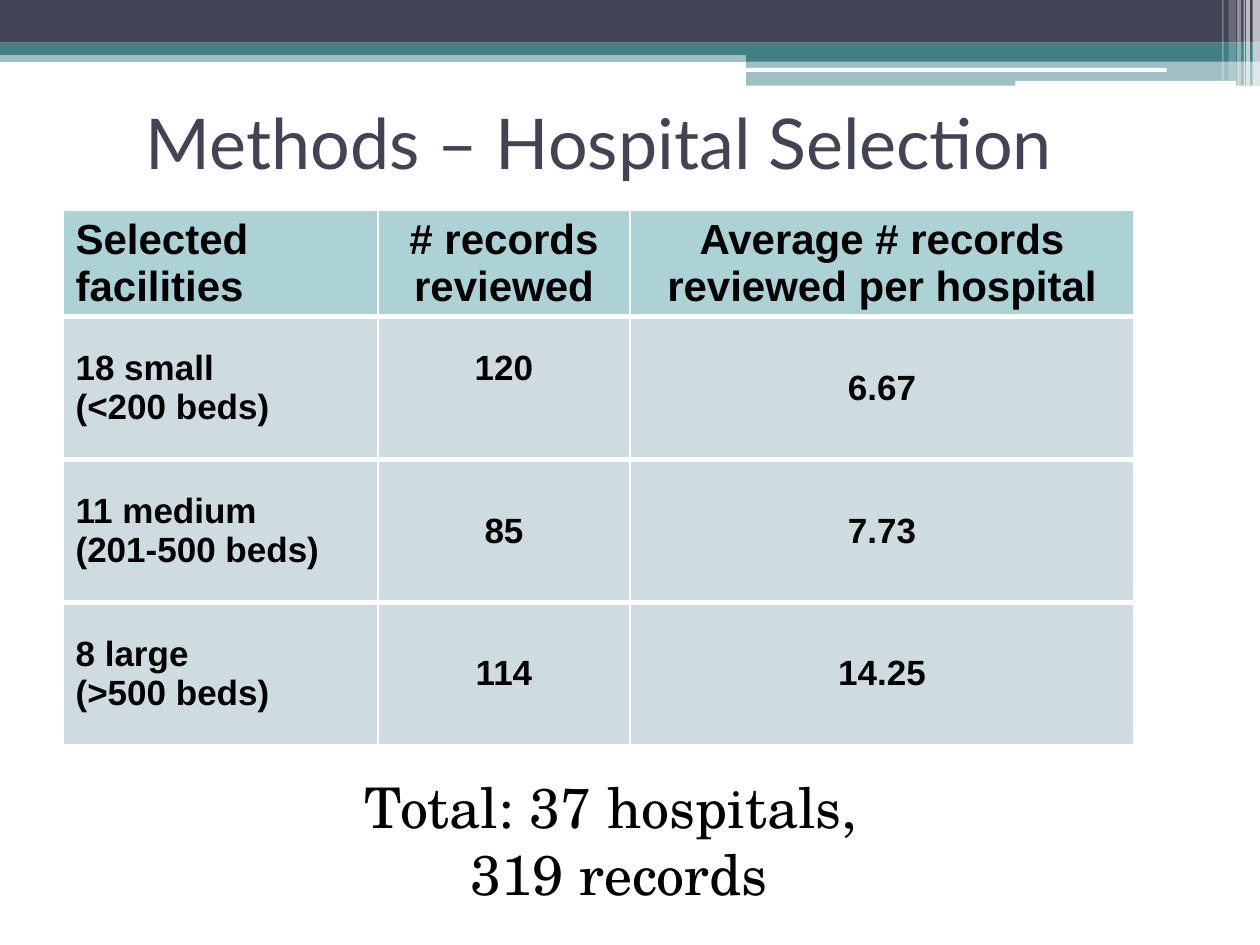
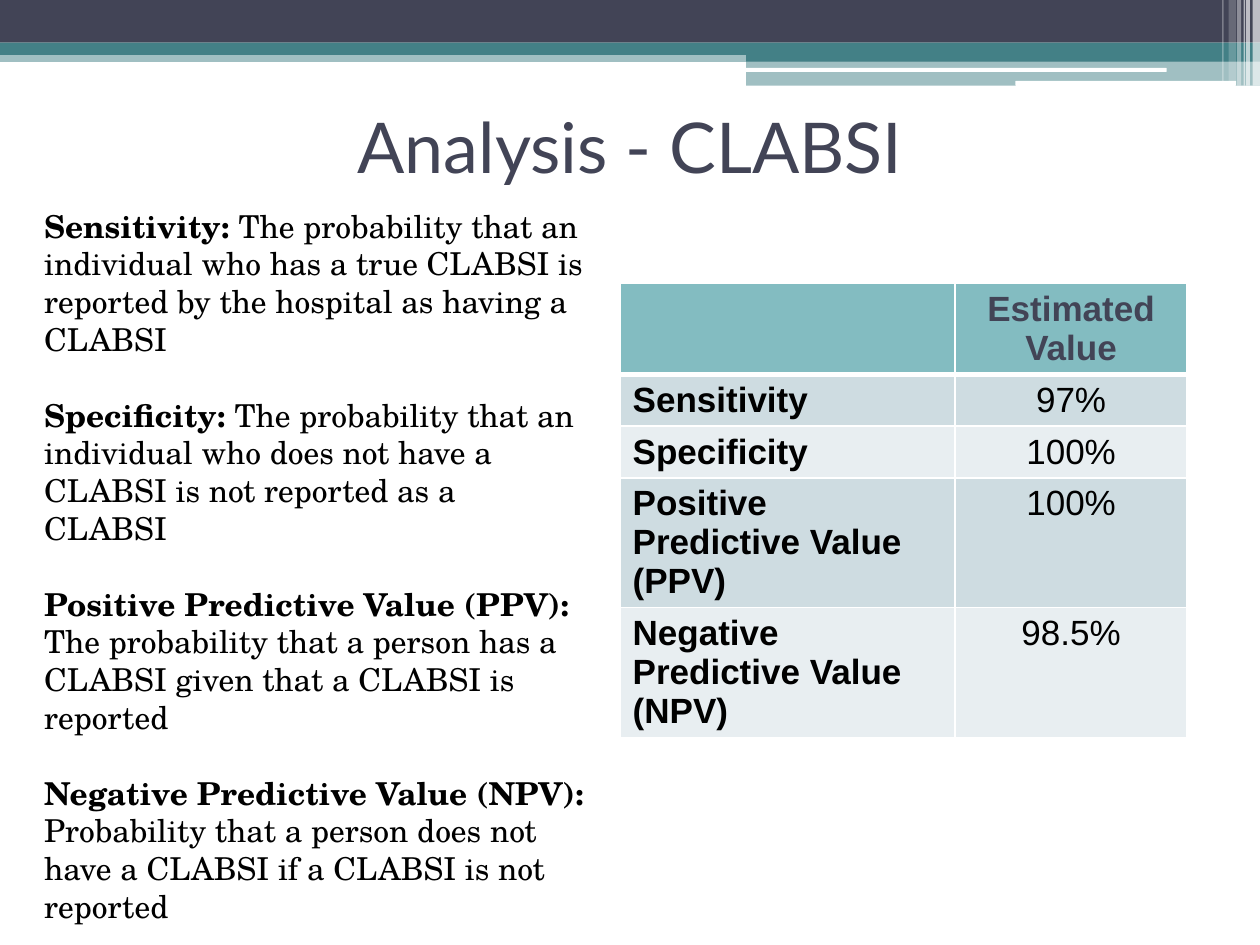
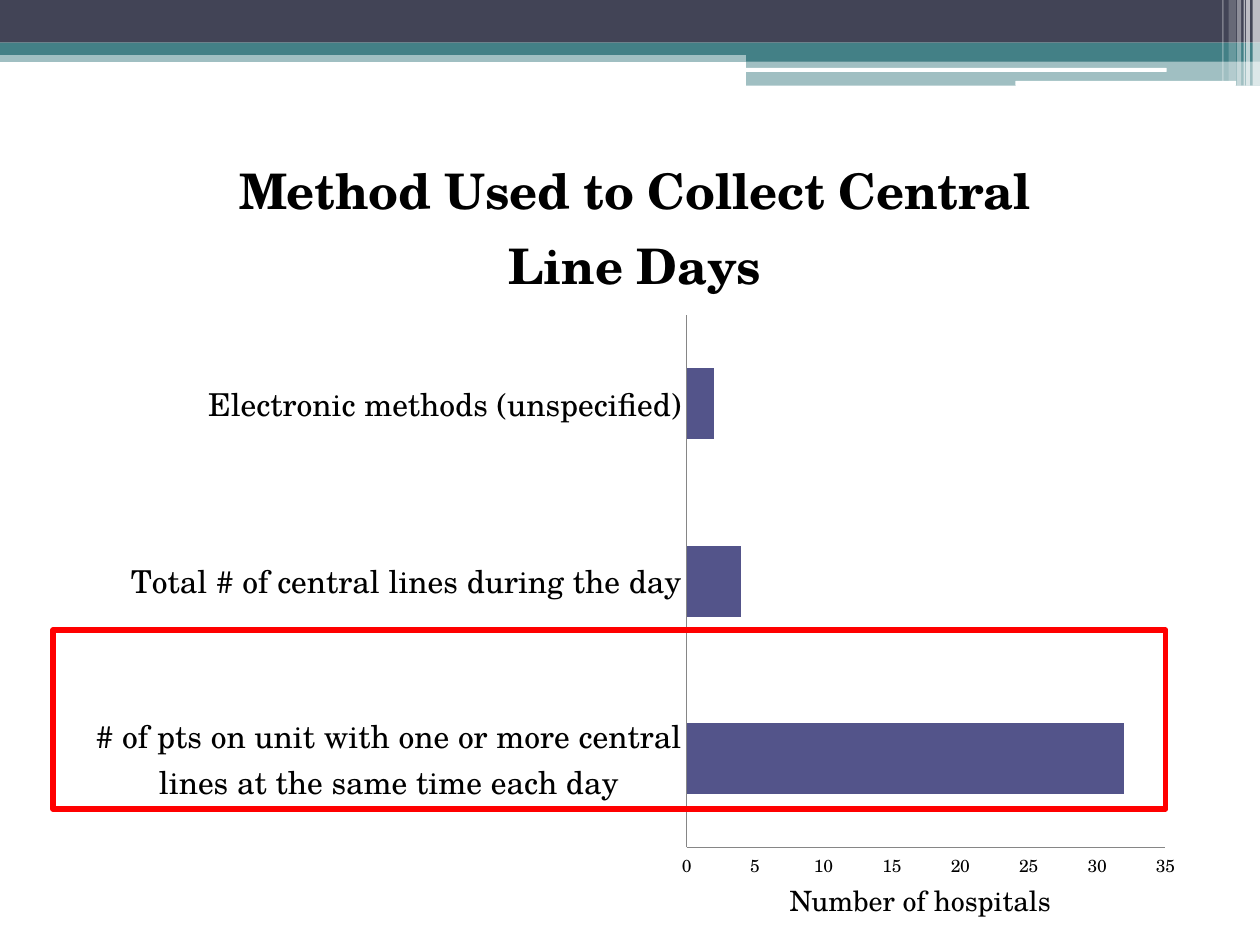
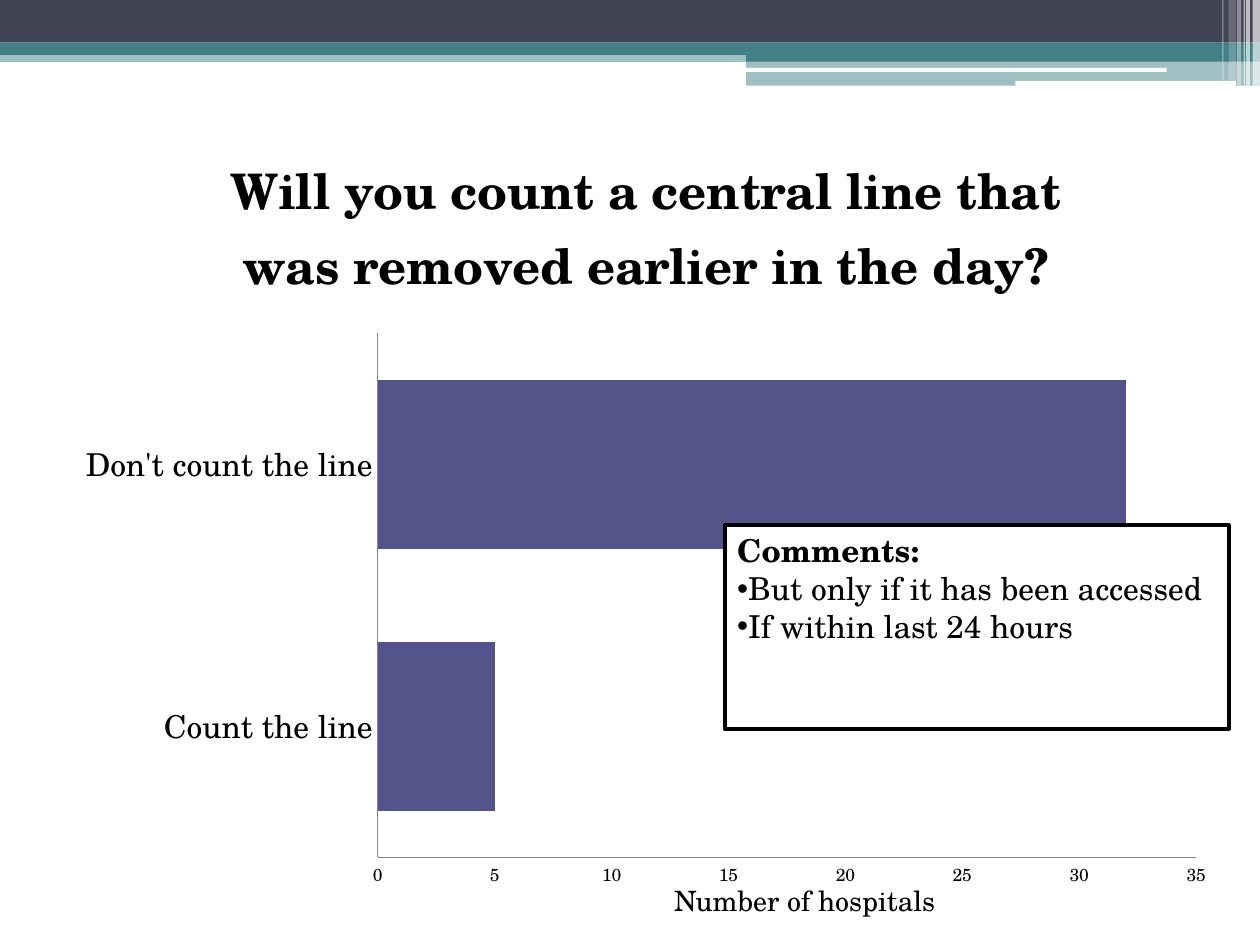
import collections

import lxml.etree
import pptx
import pptx.chart.data
import pptx.dml.color
import pptx.enum.chart
import pptx.enum.shapes
import pptx.enum.text
import pptx.oxml.ns
import pptx.util

Cm = pptx.util.Cm
Pt = pptx.util.Pt
RGBColor = pptx.dml.color.RGBColor
qn = pptx.oxml.ns.qn
Align = pptx.enum.text.PP_ALIGN
Anchor = pptx.enum.text.MSO_ANCHOR
AutoSize = pptx.enum.text.MSO_AUTO_SIZE
Preset = pptx.enum.shapes.MSO_SHAPE

DARK = RGBColor(0x42, 0x44, 0x56)
TEAL = RGBColor(0x43, 0x80, 0x86)
WHITE = RGBColor(0xFF, 0xFF, 0xFF)
BLACK = RGBColor(0, 0, 0)
RED = RGBColor(0xFF, 0, 0)
BAR_BLUE = RGBColor(0x53, 0x54, 0x8A)
AXIS_GRAY = RGBColor(0x86, 0x86, 0x86)
HEADER_PALE = RGBColor(0xAD, 0xD2, 0xD6)
HEADER_TEAL = RGBColor(0x83, 0xBC, 0xC1)
ROW_GRAY = RGBColor(0xCE, 0xDC, 0xE1)
ROW_LIGHT = RGBColor(0xE8, 0xEE, 0xF1)

TITLE_FONT = "Lato"
TABLE_FONT = "Arial"
TEXT_FONT = "TeX Gyre Schola"

TITLE_ONLY, BLANK = 5, 6
THIN, THICK = Pt(1), Pt(3)

Box = collections.namedtuple("Box", "left top width height")


def cm_box(left, top, width, height):
    return Box(Cm(left), Cm(top), Cm(width), Cm(height))


def add_run(paragraph, text, size, font=TEXT_FONT, color=BLACK, bold=False):
    run = paragraph.add_run()
    run.text = text
    run.font.size = Pt(size)
    run.font.name = font
    run.font.color.rgb = color
    run.font.bold = bold


def next_paragraph(text_frame, index):
    """Return the frame's first paragraph for index 0, otherwise a new one."""
    return text_frame.add_paragraph() if index else text_frame.paragraphs[0]


def add_panel(slide, box, fill=None, line=None, line_width=0, preset=Preset.RECTANGLE):
    shape = slide.shapes.add_shape(preset, *box)
    shape.shadow.inherit = False
    if fill is None:
        shape.fill.background()
    else:
        shape.fill.solid()
        shape.fill.fore_color.rgb = fill
    if line is None:
        shape.line.fill.background()
    else:
        shape.line.color.rgb = line
        shape.line.width = Pt(line_width)
    return shape


def set_opacity(shape, percent):
    color = shape.element.spPr.xpath("./a:solidFill/a:srgbClr")[0]
    lxml.etree.SubElement(color, qn("a:alpha"), val=str(percent * 1000))


def add_band(presentation, slide, box):
    """Draw the top band on a slide and move it to the slide master."""
    step = Cm(15.04)
    bars = [  # left, top, width, height, colour, opacity
        (0, Cm(1.02), box.width, Cm(0.23), TEAL, 50),
        (0, 0, box.width, Cm(0.86), DARK, 100),
        (0, Cm(0.86), box.width, Cm(0.25), TEAL, 100),
        (step, Cm(0.99), box.width - step, Cm(0.25), TEAL, 100),
        (step, Cm(1.22), box.width - step, Cm(0.51), TEAL, 50),
    ]
    rounded = [
        (Cm(15.01), Cm(1.37), Cm(8.51), Cm(0.08), WHITE, 100),
        (Cm(20.47), Cm(1.63), Cm(4.45), Cm(0.1), WHITE, 100),
    ]
    stripes = [
        (Cm(left), 0, Cm(width), Cm(height), WHITE, opacity)
        for left, width, height, opacity in (
            (25.25, 0.15, 1.73, 65),
            (25.12, 0.08, 1.73, 65),
            (25.07, 0.03, 1.73, 60),
            (24.94, 0.08, 1.73, 40),
            (24.77, 0.15, 1.63, 20),
            (24.64, 0.03, 1.63, 30),
        )
    ]
    master_tree = presentation.slide_master.shapes.element
    for index, part in enumerate(bars + rounded + stripes):
        left, top, width, height, color, opacity = part
        preset = Preset.ROUNDED_RECTANGLE if part in rounded else Preset.RECTANGLE
        place = Box(box.left + left, box.top + top, width, height)
        shape = add_panel(slide, place, color, preset=preset)
        if opacity < 100:
            set_opacity(shape, opacity)
        shape.element.nvSpPr.cNvPr.set("id", str(100 + index))
        master_tree.insert(2 + index, shape.element)


def set_title(slide, box, text):
    title = slide.shapes.title
    title.left, title.top, title.width, title.height = box
    title.text_frame.vertical_anchor = Anchor.BOTTOM
    paragraph = title.text_frame.paragraphs[0]
    paragraph.alignment = Align.CENTER
    add_run(paragraph, text, 40, TITLE_FONT, DARK)


def add_text(slide, box, paragraphs, size, align=Align.LEFT, gap=0):
    """Add a text box; each paragraph is a list of (text, bold) runs."""
    text_box = slide.shapes.add_textbox(*box)
    frame = text_box.text_frame
    frame.word_wrap = True
    frame.auto_size = AutoSize.SHAPE_TO_FIT_TEXT
    for index, runs in enumerate(paragraphs):
        paragraph = next_paragraph(frame, index)
        paragraph.alignment = align
        if index:
            paragraph.space_before = Pt(gap)
        for text, bold in runs:
            add_run(paragraph, text, size, bold=bold)


def set_borders(cell, top, bottom):
    properties = cell._tc.get_or_add_tcPr()
    edges = (("a:lnL", THIN), ("a:lnR", THIN), ("a:lnT", top), ("a:lnB", bottom))
    for index, (tag, width) in enumerate(edges):
        line = lxml.etree.Element(qn(tag), w=str(width))
        fill = lxml.etree.SubElement(line, qn("a:solidFill"))
        lxml.etree.SubElement(fill, qn("a:srgbClr"), val=str(WHITE))
        properties.insert(index, line)


def fill_cell(cell, text, size, color, bold, align, anchor):
    cell.vertical_anchor = anchor
    for index, line in enumerate(text.split("\n") if text else []):
        paragraph = next_paragraph(cell.text_frame, index)
        paragraph.alignment = align
        add_run(paragraph, line, size, TABLE_FONT, color, bold)


def add_grid(slide, box, rows, column_shares, row_shares, header_fill, row_fills,
             header_size=20, header_color=BLACK, bold_values=False,
             body_anchor=Anchor.TOP, row_line=THIN):
    """Add a table whose columns and rows divide the box by their shares."""
    table = slide.shapes.add_table(len(rows), len(column_shares), *box).table
    table.horz_banding = False
    for column, share in zip(table.columns, column_shares):
        column.width = int(box.width * share / sum(column_shares))
    for row, share in zip(table.rows, row_shares):
        row.height = int(box.height * share / sum(row_shares))

    last = len(rows) - 1
    lines = [THIN, THICK] + [row_line] * (last - 1) + [THIN]
    for row_index, texts in enumerate(rows):
        is_header = row_index == 0
        for column_index, text in enumerate(texts):
            cell = table.cell(row_index, column_index)
            cell.fill.solid()
            cell.fill.fore_color.rgb = (
                header_fill if is_header else row_fills[(row_index - 1) % len(row_fills)])
            set_borders(cell, lines[row_index], lines[row_index + 1])
            fill_cell(
                cell, text,
                size=header_size if is_header else 20,
                color=header_color if is_header else BLACK,
                bold=is_header or column_index == 0 or bold_values,
                align=Align.CENTER if column_index else Align.LEFT,
                anchor=Anchor.TOP if is_header else body_anchor)
    return table


def set_plot_area(chart, x, y, width, height):
    """Fix the inner plot area, in fractions of the chart."""
    plot_area = chart.element.xpath("c:chart/c:plotArea")[0]
    for old_layout in plot_area.findall(qn("c:layout")):
        plot_area.remove(old_layout)
    layout = lxml.etree.Element(qn("c:layout"))
    manual = lxml.etree.SubElement(layout, qn("c:manualLayout"))
    settings = (("layoutTarget", "inner"), ("xMode", "edge"), ("yMode", "edge"),
                ("x", x), ("y", y), ("w", width), ("h", height))
    for name, value in settings:
        lxml.etree.SubElement(manual, qn("c:" + name), val=str(value))
    plot_area.insert(0, layout)


def add_hospital_chart(slide, box, title, counts, plot_area, gap_width):
    """Add a bar chart of hospital counts, first category at the bottom."""
    data = pptx.chart.data.CategoryChartData()
    data.categories = list(counts)
    data.add_series("Series 1", list(counts.values()))
    chart = slide.shapes.add_chart(
        pptx.enum.chart.XL_CHART_TYPE.BAR_CLUSTERED, *box, data).chart
    chart.has_legend = False
    chart.font.size = Pt(10)
    chart.font.name = TEXT_FONT
    chart.font.color.rgb = BLACK

    chart.has_title = True
    add_run(chart.chart_title.text_frame.paragraphs[0], title, 28, bold=True)
    chart.chart_title.include_in_layout = False

    for axis in (chart.category_axis, chart.value_axis):
        axis.major_tick_mark = pptx.enum.chart.XL_TICK_MARK.NONE
        axis.has_major_gridlines = False
        axis.format.line.color.rgb = AXIS_GRAY
    category_font = chart.category_axis.tick_labels.font
    category_font.size = Pt(18)
    category_font.name = TEXT_FONT
    category_font.color.rgb = BLACK
    chart.value_axis.minimum_scale = 0
    chart.value_axis.maximum_scale = 35
    chart.value_axis.major_unit = 5

    plot = chart.plots[0]
    plot.gap_width = gap_width
    plot.vary_by_categories = False
    bars = plot.series[0].format.fill
    bars.solid()
    bars.fore_color.rgb = BAR_BLUE
    set_plot_area(chart, *plot_area)


def add_axis_caption(slide, left):
    add_text(slide, Box(left, Cm(17.68), Cm(12.5), Cm(0.94)),
             [[("Number of hospitals", False)]], 16)


def add_comments(slide, box, heading, comments):
    panel = add_panel(slide, box, WHITE, BLACK, 2.25)
    frame = panel.text_frame
    frame.word_wrap = True
    frame.vertical_anchor = Anchor.TOP
    for index, text in enumerate([heading] + comments):
        paragraph = next_paragraph(frame, index)
        paragraph.alignment = Align.LEFT
        if index:
            properties = paragraph._p.get_or_add_pPr()
            lxml.etree.SubElement(properties, qn("a:buFont"), typeface="Arial")
            lxml.etree.SubElement(properties, qn("a:buChar"), char="•")
        add_run(paragraph, text, 18, bold=index == 0)


def build_hospital_selection(slide):
    set_title(slide, cm_box(0.64, 1.91, 22.86, 1.91), "Methods – Hospital Selection")
    rows = [
        ("Selected facilities", "# records reviewed",
         "Average # records reviewed per hospital"),
        ("18 small\n(<200 beds)", "120", "6.67"),
        ("11 medium\n(201-500 beds)", "85", "7.73"),
        ("8 large\n(>500 beds)", "114", "14.25"),
    ]
    table = add_grid(
        slide, cm_box(1.27, 4.24, 21.59, 10.65), rows,
        column_shares=(2.5, 2, 4), row_shares=(0.79, 1.13, 1.13, 1.13),
        header_fill=HEADER_PALE, row_fills=[ROW_GRAY], header_size=24,
        bold_values=True, body_anchor=Anchor.MIDDLE, row_line=THICK)
    table.cell(1, 1).margin_bottom = Cm(0.94)  # level with the first line beside it
    add_text(slide, cm_box(5.28, 15.44, 14.4, 3),
             [[("Total: 37 hospitals, ", False)], [("319 records", False)]],
             32, Align.CENTER)


def build_analysis(slide):
    set_title(slide, cm_box(1.27, 2.34, 22.86, 1.57), "Analysis - CLABSI")
    rows = [
        ("", "Estimated Value"),
        ("Sensitivity", "97%"),
        ("Specificity", "100%"),
        ("Positive Predictive Value (PPV)", "100%"),
        ("Negative Predictive Value (NPV)", "98.5%"),
    ]
    add_grid(
        slide, cm_box(12.5, 5.72, 11.43, 9.1), rows,
        column_shares=(2.66, 1.84), row_shares=(0.71, 0.41, 0.41, 1.03, 1.03),
        header_fill=HEADER_TEAL, row_fills=[ROW_GRAY, ROW_LIGHT], header_color=DARK)
    definitions = {
        "Sensitivity: ": "The probability that an individual who has a true CLABSI "
                         "is reported by the hospital as having a CLABSI",
        "Specificity: ": "The probability that an individual who does not have a "
                         "CLABSI is not reported as a CLABSI",
        "Positive Predictive Value (PPV): ": "The probability that a person has a "
                                             "CLABSI given that a CLABSI is reported",
        "Negative Predictive Value (NPV): ": "Probability that a person does not have "
                                             "a CLABSI if a CLABSI is not reported",
    }
    add_text(slide, cm_box(0.64, 4.04, 11.43, 14.1),
             [[(term, True), (meaning, False)] for term, meaning in definitions.items()],
             18, gap=21.6)


def build_collection_method(slide):
    counts = {
        "# of pts on unit with one or more central lines at the same time each day": 32,
        "Total # of central lines during the day": 4,
        "Electronic methods (unspecified)": 2,
    }
    add_hospital_chart(
        slide, cm_box(1.47, 2.34, 22.66, 15.67),
        "Method Used to Collect Central Line Days", counts,
        plot_area=(0.546, 0.256, 0.426, 0.685), gap_width=150)
    add_panel(slide, cm_box(1.07, 12.7, 22.43, 3.61), line=RED, line_width=3)
    add_axis_caption(slide, Cm(15.67))


def build_removed_line(slide):
    add_hospital_chart(
        slide, cm_box(1.27, 2.34, 23.5, 15.88),
        "Will you count a central line that was removed earlier in the day?",
        {"Count the line": 5, "Don't count the line": 32},
        plot_area=(0.27, 0.276, 0.702, 0.665), gap_width=55)
    add_comments(slide, cm_box(14.61, 10.59, 10.16, 4.11), "Comments:",
                 ["But only if it has been accessed", "If within last 24 hours"])
    add_axis_caption(slide, Cm(13.34))


def main():
    presentation = pptx.Presentation()
    presentation.slide_width = Cm(25.4)
    presentation.slide_height = Cm(19.05)
    builders = (
        (TITLE_ONLY, build_hospital_selection),
        (TITLE_ONLY, build_analysis),
        (BLANK, build_collection_method),
        (BLANK, build_removed_line),
    )
    for index, (layout, build) in enumerate(builders):
        slide = presentation.slides.add_slide(presentation.slide_layouts[layout])
        if index == 0:
            add_band(presentation, slide, cm_box(0, 0, 25.4, 1.73))
        build(slide)
    presentation.save("out.pptx")


if __name__ == "__main__":
    main()
